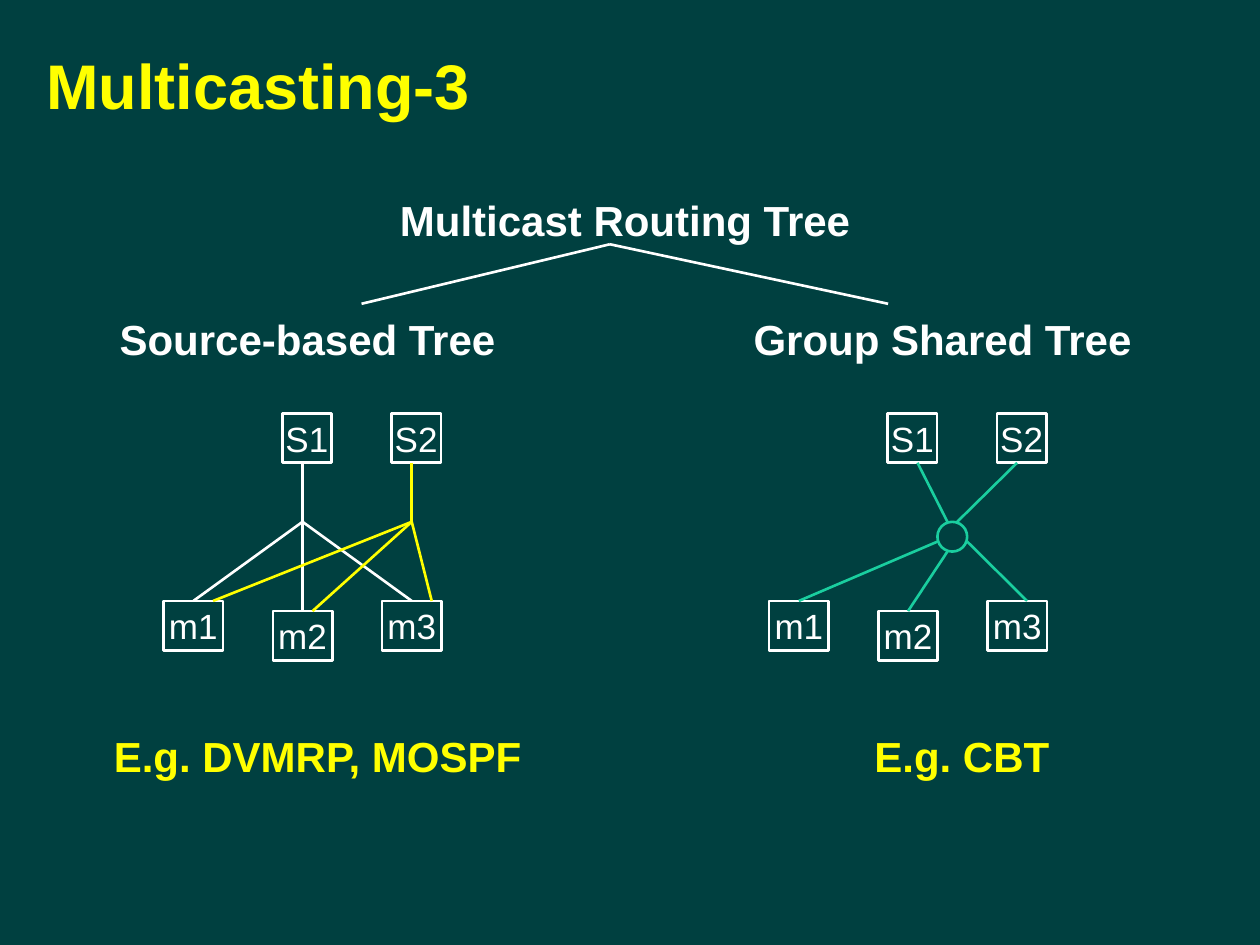
from dataclasses import dataclass
from pptx import Presentation
from pptx.dml.color import RGBColor
from pptx.enum.shapes import MSO_CONNECTOR, MSO_SHAPE
from pptx.enum.text import MSO_ANCHOR, PP_ALIGN
from pptx.oxml.ns import qn
from pptx.util import Pt
from lxml.etree import SubElement


@dataclass(frozen=True)
class Theme:
    back: str = "004040"
    white: str = "FFFFFF"
    yellow: str = "FFFF00"
    green: str = "1ACE9F"
    font: str = "Arial"
    title: float = 36
    head: float = 24
    node: float = 20
    line: float = 1.5


def apply(item, values):
    for name, value in values.items():
        setattr(item, name, value)


class Painter:
    def __init__(self, slide, theme):
        self.slide, self.theme = slide, theme
        fill = slide.background.fill
        fill.solid()
        fill.fore_color.rgb = RGBColor.from_string(theme.back)

    def letter(self, shape, text, size, color, bold=False, wrap=True, para=None):
        """Put one line of centred text into a shape."""
        frame = shape.text_frame
        apply(frame, {"word_wrap": wrap, "vertical_anchor": MSO_ANCHOR.MIDDLE})
        line = frame.paragraphs[0]
        apply(line, {"alignment": PP_ALIGN.CENTER, **(para or {})})
        run = line.add_run()
        run.text = text
        apply(run.font, {"name": self.theme.font, "size": Pt(size), "bold": bold})
        run.font.color.rgb = RGBColor.from_string(color)

    def label(self, text, box, size, color, para=None):
        shape = self.slide.shapes.add_textbox(*map(Pt, box))
        self.letter(shape, text, size, color, bold=True, para=para)

    def head(self, text, box, color):
        para = {"line_spacing": 1.2, "space_before": Pt(2.4)}
        self.label(text, box, self.theme.head, color, para)

    def stroke(self, line, color):
        line.color.rgb = RGBColor.from_string(color)
        line.width = Pt(self.theme.line)

    def shape(self, kind, box, color):
        shape = self.slide.shapes.add_shape(kind, *map(Pt, box))
        shape.shadow.inherit = False
        shape.fill.background()
        self.stroke(shape.line, color)
        return shape

    def node(self, text, box):
        white = self.theme.white
        shape = self.shape(MSO_SHAPE.RECTANGLE, box, white)
        self.letter(shape, text, self.theme.node, white, wrap=False)

    def line(self, start, end, color):
        line = self.slide.shapes.add_connector(
            MSO_CONNECTOR.STRAIGHT, *map(Pt, (*start, *end)))
        SubElement(line._element.spPr, qn("a:effectLst"))
        self.stroke(line.line, color)

    def fan(self, hub, ends, color):
        for end in ends:
            self.line(hub, end, color)


STEP, SHIFT = 62.4, 346   # between columns, between the two trees
SIDE, WIDE = 28.3, 34     # node height, member width
TOP, HUB = 236.2, 298.2
LOW = (343.4, 349.2, 343.4)  # tops of m1, m2, m3


def nodes(pen, left):
    for i in range(2):
        pen.node(f"S{i + 1}", (left + 67.8 + i * STEP, TOP, SIDE, SIDE))
    for i, y in enumerate(LOW):
        pen.node(f"m{i + 1}", (left + i * STEP, y, WIDE, SIDE))


def source(pen, left):
    """Draw one tree for each of the two sources."""
    nodes(pen, left)
    hues = (pen.theme.white, pen.theme.yellow)
    drops = ((17, 79.4, 141.8), (28.3, 85.1, 153.2))
    for i, (hue, xs) in enumerate(zip(hues, drops)):
        hub = (left + 79.4 + i * STEP, HUB)
        ends = [(left + x, y) for x, y in zip(xs, LOW)]
        pen.fan(hub, [(hub[0], TOP + SIDE), *ends], hue)


def shared(pen, left):
    """Draw the tree that all sources share through one core."""
    nodes(pen, left)
    green, size = pen.theme.green, 17
    core = left + 96.2
    pen.shape(MSO_SHAPE.OVAL, (core, HUB, size, size), green)
    for x, end in ((5.7, 84.8), (11.3, 141.7)):
        pen.line((left + end, TOP + SIDE), (core + x, HUB), green)
    spokes = ((0, 11.3, 17), (5.7, size, 79.4), (size, 11.3, 147.4))
    for (x, y, end), low in zip(spokes, LOW):
        pen.line((core + x, HUB + y), (left + end, low), green)


def main():
    deck = Presentation()
    apply(deck, {"slide_width": Pt(720), "slide_height": Pt(540)})
    theme = Theme()
    pen = Painter(deck.slides.add_slide(deck.slide_layouts[6]), theme)

    pen.label("Multicasting-3", (14.4, 15.1, 266.4, 66.2), theme.title, theme.yellow)
    wide, high = 278, 33.8
    for text, x, y, width, color in (
        ("Multicast Routing Tree", 218.2, 105.8, wide, theme.white),
        ("Source-based Tree", 36.7, 173.8, wide, theme.white),
        ("Group Shared Tree", 399.6, 173.8, wide, theme.white),
        ("E.g. DVMRP, MOSPF", 42.5, 412, wide, theme.yellow),
        ("E.g. CBT", 439.2, 412, 221, theme.yellow),
    ):
        pen.head(text, (x, y, width, high), color)
    pen.fan((348.5, 139.6), [(206.6, 173.6), (507.5, 173.6)], theme.white)

    left = 93.5
    source(pen, left)
    shared(pen, left + SHIFT)
    deck.save("out.pptx")


if __name__ == "__main__":
    main()
